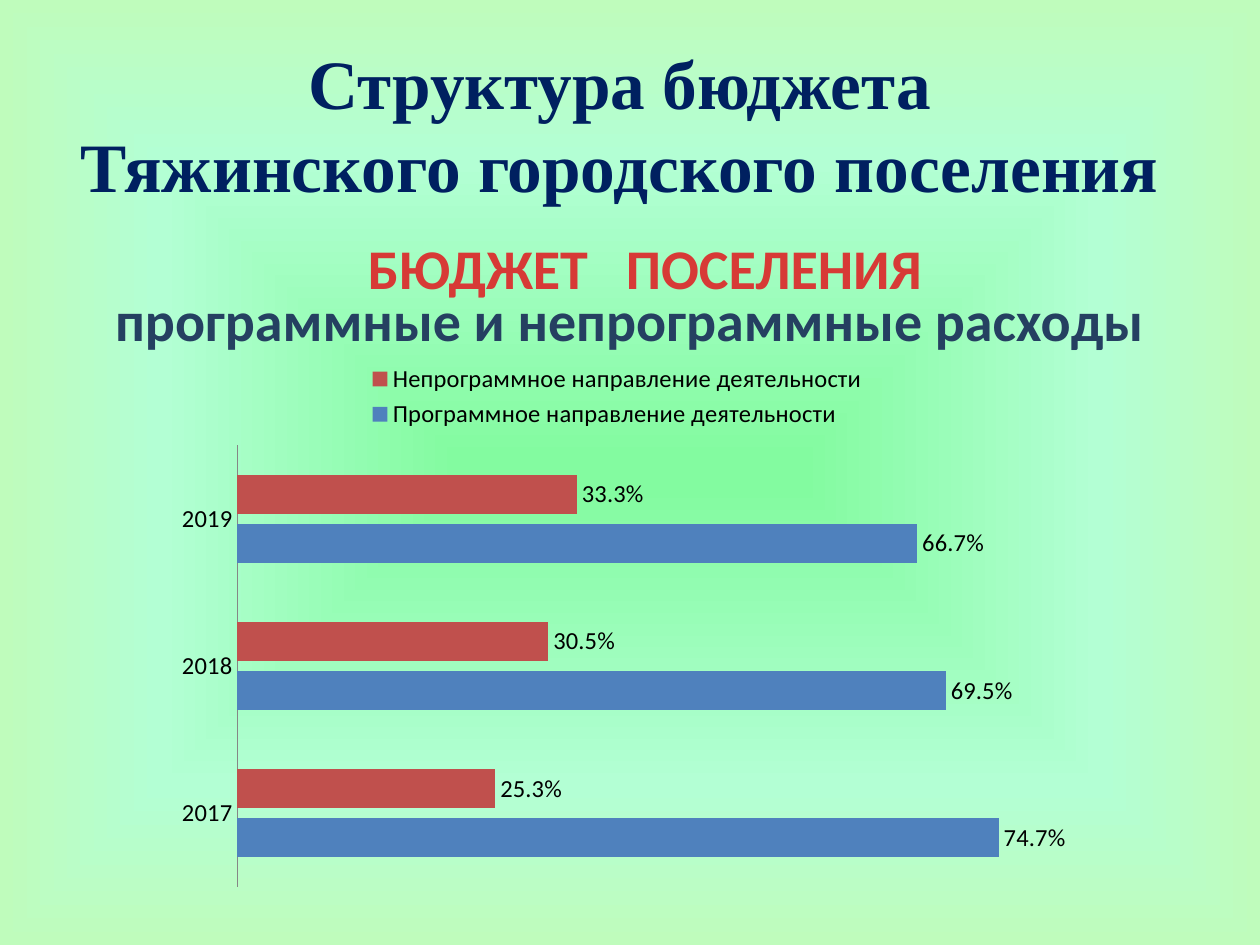
"""Build the slide on programme and non-programme spending of a settlement budget."""
from lxml.etree import SubElement
from pptx import Presentation
from pptx.chart.data import CategoryChartData
from pptx.dml.color import RGBColor
from pptx.enum.chart import XL_CHART_TYPE as ChartType, XL_LABEL_POSITION as LabelPosition
from pptx.enum.chart import XL_LEGEND_POSITION as LegendPosition, XL_TICK_MARK as TickMark
from pptx.enum.text import MSO_ANCHOR as Anchor, PP_ALIGN as Align
from pptx.oxml import parse_xml
from pptx.oxml.ns import nsdecls, qn
from pptx.util import Inches, Pt

THEME = {
    "title": ("Times New Roman", 39.6, "002060"),
    "heading": ("Calibri", 32, "D73A36"),
    "subtitle": ("Calibri", 32, "254061"),
    "chart": ("Calibri", 14, "000000"),
    "axis": "868686",
    "programme": "4F81BD",
    "other": "C0504D",
    "background": [(3, "83FBA0"), (66, "B3FFD4"), (100, "BFFCBC")],
}


def style_font(font, role, bold):
    font.name, size, color = THEME[role]
    font.size, font.bold = Pt(size), bold
    font.color.rgb = RGBColor.from_string(color)


presentation = Presentation()
presentation.slide_width, presentation.slide_height = Inches(10), Inches(7.5)
WIDTH, HEIGHT = presentation.slide_width, presentation.slide_height
slide = presentation.slides.add_slide(presentation.slide_layouts[6])

slide.background.fill.gradient()
gradient = slide.background._cSld.find(".//" + qn("a:gradFill"))
for child in list(gradient):
    gradient.remove(child)
stops = SubElement(gradient, qn("a:gsLst"))
for position, color in THEME["background"]:
    stop = SubElement(stops, qn("a:gs"), pos=str(position * 1000))
    SubElement(stop, qn("a:srgbClr"), val=color)
gradient.append(parse_xml(
    f'<a:path {nsdecls("a")} path="rect">'
    '<a:fillToRect l="50000" t="50000" r="50000" b="50000"/></a:path>'))

texts = [
    ("title", ["Структура бюджета", "Тяжинского городского поселения"],
     (0.042, 0.04, 0.9, 0.18), Anchor.MIDDLE),
    ("subtitle", ["программные и непрограммные расходы"],
     (0.05, 0.296, 0.9, 0.09), Anchor.TOP),
    ("heading", ["БЮДЖЕТ   ПОСЕЛЕНИЯ"], (0.13, 0.24, 0.764, 0.085), Anchor.TOP),
]
for role, lines, (left, top, width, height), anchor in texts:
    shape = slide.shapes.add_textbox(
        int(left * WIDTH), int(top * HEIGHT), int(width * WIDTH), int(height * HEIGHT))
    frame = shape.text_frame
    frame.word_wrap, frame.vertical_anchor = True, anchor
    frame.text = "\n".join(lines)
    for paragraph in frame.paragraphs:
        paragraph.alignment = Align.CENTER
        style_font(paragraph.font, role, True)

chart_data = CategoryChartData(number_format="0.0%")
chart_data.categories = ["2017", "2018", "2019"]
chart_data.add_series("Программное направление деятельности", [0.747, 0.695, 0.667])
chart_data.add_series("Непрограммное направление деятельности", [0.253, 0.305, 0.333])
chart = slide.shapes.add_chart(
    ChartType.BAR_CLUSTERED, int(0.13 * WIDTH), int(0.37 * HEIGHT),
    int(0.72 * WIDTH), int(0.58 * HEIGHT), chart_data).chart
style_font(chart.font, "chart", False)
chart.has_title = False
chart.has_legend = True
chart.legend.position = LegendPosition.TOP
chart.legend.include_in_layout = False

chart.value_axis.visible = False
chart.value_axis.has_major_gridlines = False
chart.value_axis.minimum_scale, chart.value_axis.maximum_scale = 0, 0.8
chart.category_axis.major_tick_mark = TickMark.NONE
chart.category_axis.format.line.color.rgb = RGBColor.from_string(THEME["axis"])

plot = chart.plots[0]
plot.gap_width, plot.overlap, plot.vary_by_categories = 150, -25, False
plot.has_data_labels = True
labels = plot.data_labels
labels.show_value, labels.position = True, LabelPosition.OUTSIDE_END
labels.number_format, labels.number_format_is_linked = "0.0%", False
for series, role in zip(plot.series, ("programme", "other")):
    series.format.fill.solid()
    series.format.fill.fore_color.rgb = RGBColor.from_string(THEME[role])

presentation.save("out.pptx")
